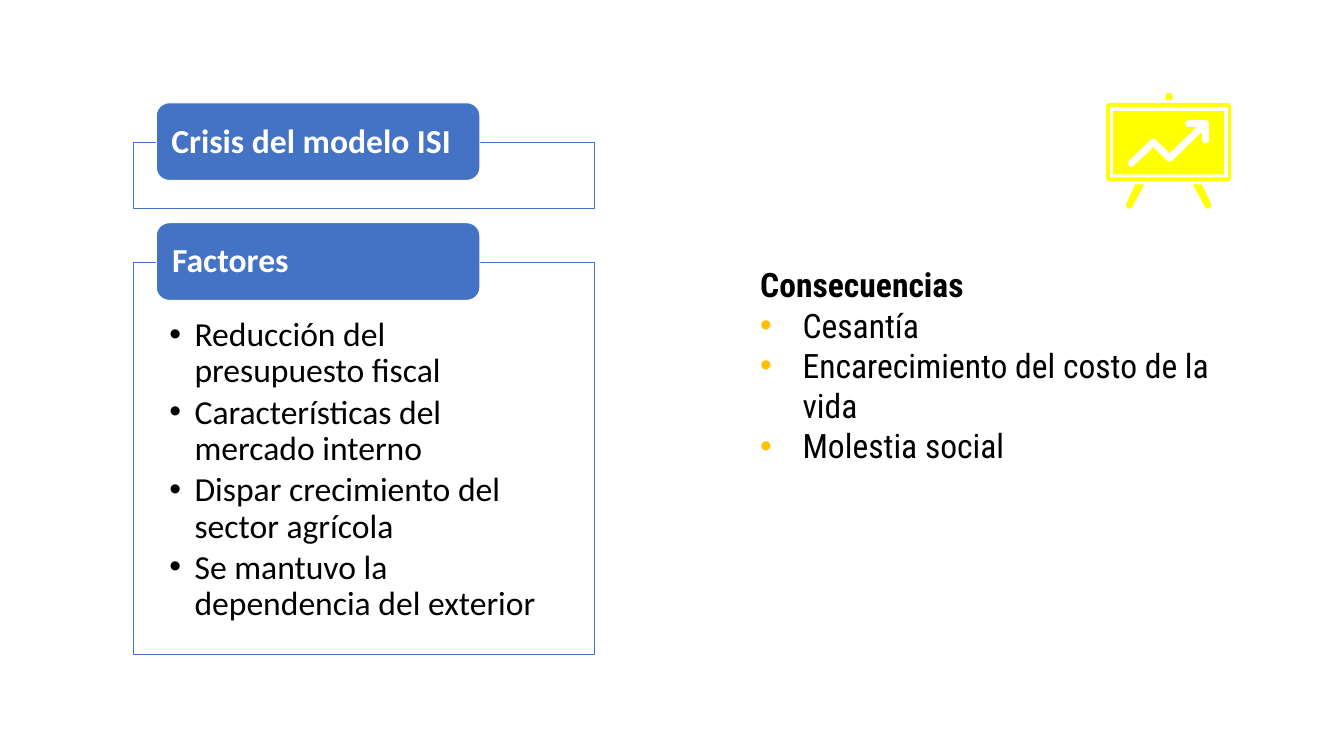
from lxml.etree import SubElement
from pptx import Presentation
from pptx.dml.color import RGBColor
from pptx.enum.shapes import MSO_SHAPE
from pptx.enum.text import MSO_ANCHOR, MSO_AUTO_SIZE, PP_ALIGN
from pptx.oxml.ns import qn
from pptx.util import Inches, Pt

HEX = {"blue": "4472C4", "white": "FFFFFF", "black": "000000",
       "gold": "FFC000", "yellow": "FFFF00"}
HEAD = {"name": "Calibri", "size": Pt(24), "bold": True}
ITEM = {"name": "Calibri", "size": Pt(24), "bold": False}
SIDE = {"name": "Roboto Condensed", "size": Pt(24), "bold": False}
FACTORS = ["Reducción del presupuesto fiscal",
           "Características del mercado interno",
           "Dispar crecimiento del sector agrícola",
           "Se mantuvo la dependencia del exterior"]
EFFECTS = ["Cesantía", "Encarecimiento del costo de la vida", "Molestia social"]


def tint(name):
    return RGBColor.from_string(HEX[name])


def apply(target, values):
    for key, value in values.items():
        setattr(target, key, value)


def paint(shape, fill=None, line=None, width=0.75):
    shape.shadow.inherit = False
    if fill:
        shape.fill.solid()
        shape.fill.fore_color.rgb = tint(fill)
    else:
        shape.fill.background()
    if line:
        shape.line.color.rgb = tint(line)
        shape.line.width = Pt(width)
    else:
        shape.line.fill.background()


def block(slide, kind, box, fill, line=None):
    shape = slide.shapes.add_shape(kind, *map(Inches, box))
    paint(shape, fill, line)
    return shape


def path(slide, points, close, **look):
    spots = [(Inches(x), Inches(y)) for x, y in points]
    pen = slide.shapes.build_freeform(*spots[0])
    pen.add_line_segments(spots[1:], close=close)
    shape = pen.convert_to_shape()
    paint(shape, **look)
    return shape


def place(holder, box):
    """Move a placeholder to its box, in front of what is drawn so far."""
    apply(holder, dict(zip(("left", "top", "width", "height"), map(Inches, box))))
    node = holder._element
    node.getparent().append(node)


def frame(shape, pads, anchor):
    names = ("margin_left", "margin_top", "margin_right", "margin_bottom")
    text = shape.text_frame
    apply(text, dict(zip(names, map(Inches, pads))))
    apply(text, {"word_wrap": True, "auto_size": MSO_AUTO_SIZE.NONE,
                 "vertical_anchor": anchor})
    return text


def write(para, words, font, color, lead, after):
    apply(para, {"alignment": PP_ALIGN.LEFT, "line_spacing": lead,
                 "space_before": Pt(0), "space_after": Pt(after)})
    run = para.add_run()
    run.text = words
    apply(run.font, font)
    run.font.color.rgb = tint(color)


def bullet(para, indent, color=None):
    props = para._p.get_or_add_pPr()
    props.set("marL", str(Inches(indent)))
    props.set("indent", str(-Inches(indent)))
    if not indent:
        SubElement(props, qn("a:buNone"))
        return
    if color:
        SubElement(SubElement(props, qn("a:buClr")), qn("a:srgbClr"), val=HEX[color])
    SubElement(props, qn("a:buFont"), typeface="Arial")
    SubElement(props, qn("a:buChar"), char="•")


def label(shape, words):
    text = frame(shape, (0.12, 0, 0.12, 0), MSO_ANCHOR.MIDDLE)
    write(text.paragraphs[0], words, HEAD, "white", 0.9, 8.4)


def panel(slide, top, height):
    """Outlined box with a blue tab across its upper edge."""
    block(slide, MSO_SHAPE.RECTANGLE, (1.32, top, 4.58, height), "white", "blue")
    return block(slide, MSO_SHAPE.ROUNDED_RECTANGLE,
                 (1.55, top - 0.39, 3.21, 0.77), "blue", "white")


def rows(text, words):
    for index, word in enumerate(words):
        yield (text.add_paragraph() if index else text.paragraphs[0]), word


def board(slide):
    """Presentation board with a rising arrow."""
    mid = 11.59
    rim = block(slide, MSO_SHAPE.ROUNDED_RECTANGLE, (10.97, 1.02, 1.24, 0.78), "yellow")
    rim.adjustments[0] = 0.05
    block(slide, MSO_SHAPE.RECTANGLE, (11.01, 1.06, 1.17, 0.7), "white")
    block(slide, MSO_SHAPE.RECTANGLE, (11.04, 1.1, 1.1, 0.63), "yellow")
    knob = block(slide, MSO_SHAPE.ROUND_2_SAME_RECTANGLE,
                 (mid - 0.03, 0.92, 0.07, 0.07), "yellow")
    knob.adjustments[0] = 0.5
    leg = [(0.33, 1.83), (0.42, 2.02), (0.42, 2.05), (0.4, 2.07),
           (0.38, 2.07), (0.36, 2.05), (0.24, 1.83)]
    for side in (-1, 1):
        path(slide, [(mid + side * x, y) for x, y in leg], True, fill="yellow")
    trend = [(11.22, 1.62), (11.44, 1.41), (11.6, 1.57), (11.95, 1.23)]
    tip = [(11.79, 1.23), (11.96, 1.23), (11.96, 1.39)]
    for points in (trend, tip):
        shape = path(slide, points, False, line="white", width=5)
        stroke = shape.line._get_or_add_ln()
        stroke.set("cap", "rnd")
        SubElement(stroke, qn("a:round"))


def main():
    deck = Presentation()
    deck.slide_width, deck.slide_height = Inches(13.33), Inches(7.5)
    slide = deck.slides.add_slide(deck.slide_layouts[3])
    title, left, right = slide.placeholders

    # Heading panel
    panel(slide, 1.41, 0.66)
    place(title, (1.58, 1.06, 3.13, 0.7))
    label(title, "Crisis del modelo ISI")

    # Factors panel
    label(panel(slide, 2.6, 3.89), "Factores")
    place(left, (1.32, 2.6, 4.58, 3.89))
    text = frame(left, (0.36, 0.55, 0.36, 0.19), MSO_ANCHOR.TOP)
    for para, word in rows(text, FACTORS):
        write(para, word, ITEM, "black", 0.9, 3.6)
        bullet(para, 0.25)

    # Consequences
    place(right, (7.44, 2.57, 4.83, 2.52))
    text = frame(right, (0.1, 0.05, 0.1, 0.05), MSO_ANCHOR.TOP)
    for para, word in rows(text, ["Consecuencias"] + EFFECTS):
        lead = word not in EFFECTS
        write(para, word, {**SIDE, "bold": lead}, "black", 1.0, 0)
        bullet(para, 0 if lead else 0.42, "gold")

    board(slide)
    deck.save("out.pptx")


if __name__ == "__main__":
    main()
